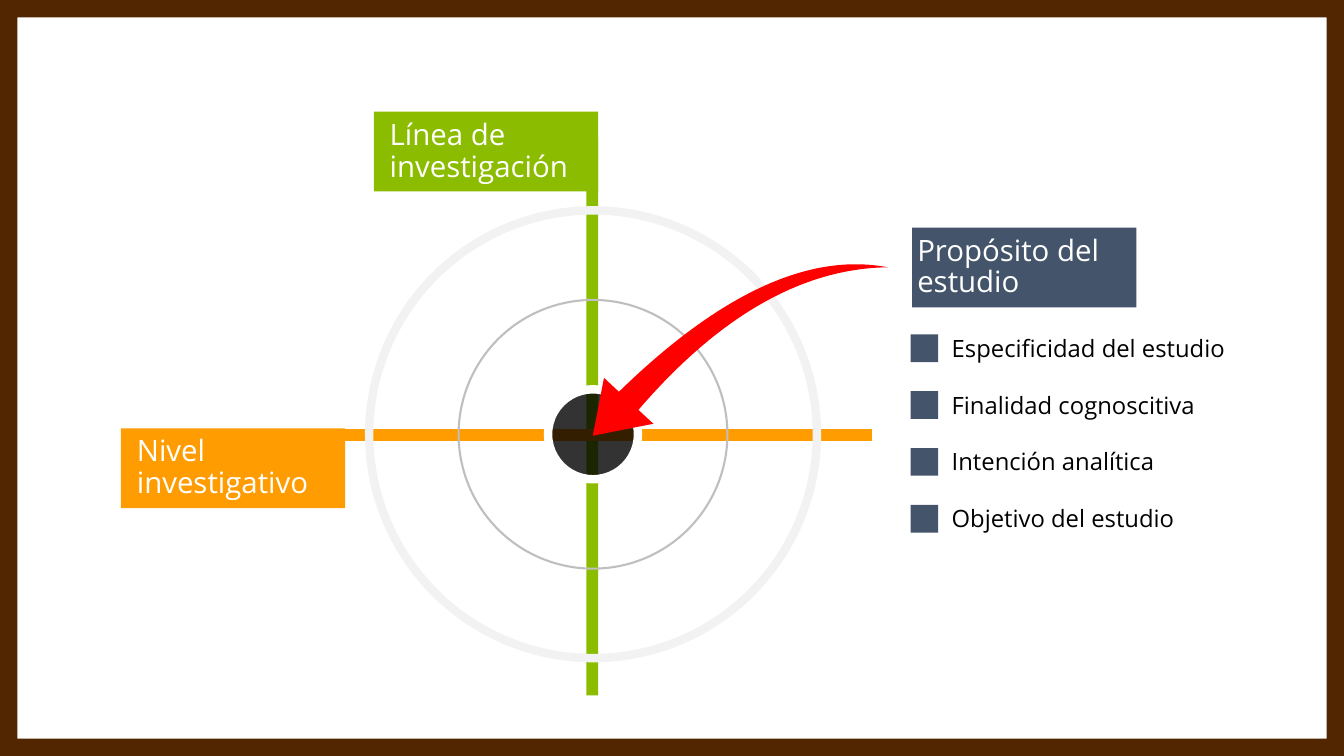
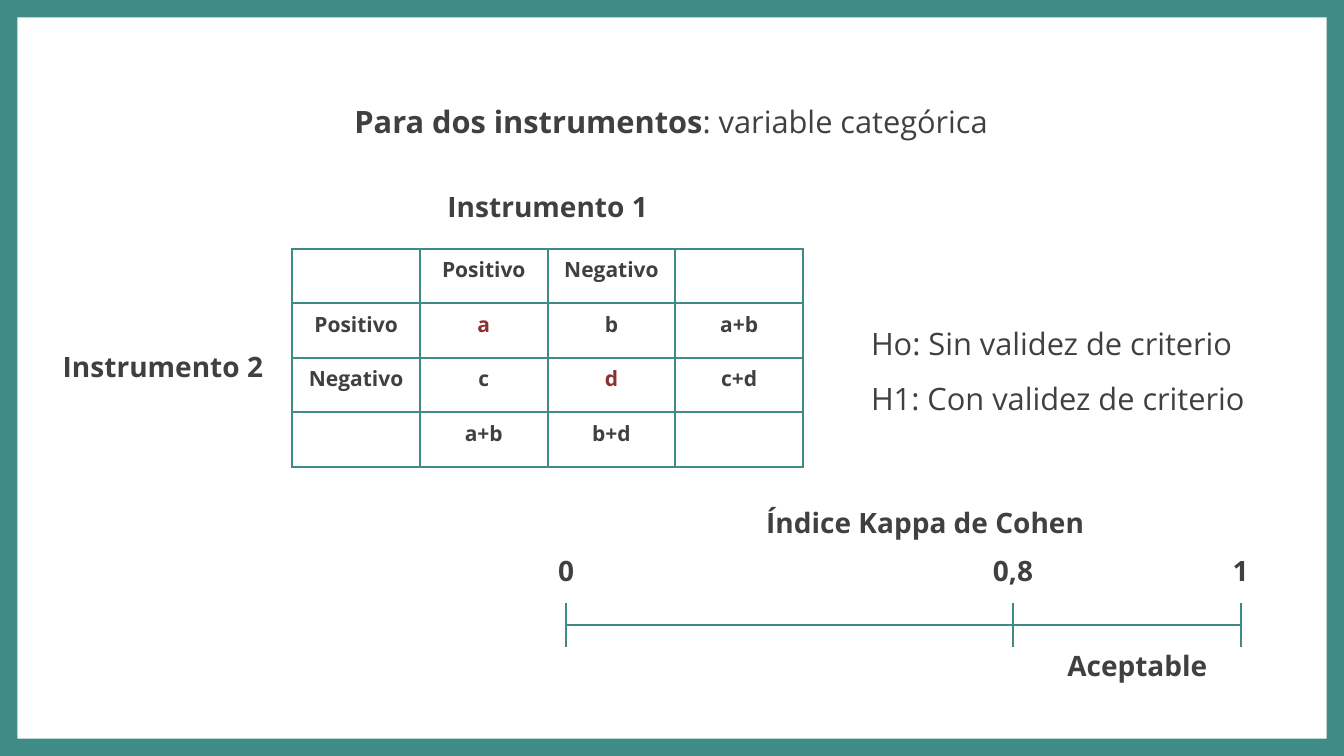
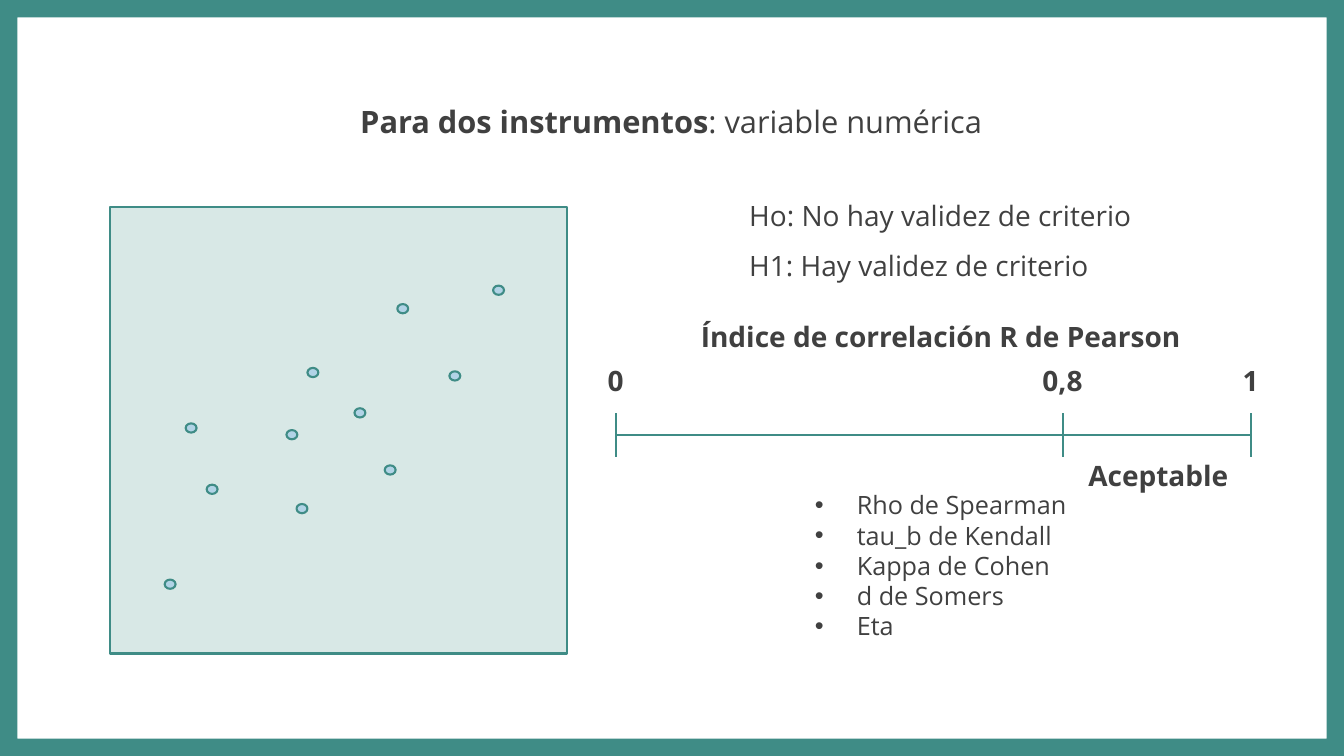
import dataclasses
import typing

import lxml.etree
import pptx
import pptx.dml.color
import pptx.enum.shapes
import pptx.enum.text
import pptx.oxml.ns
import pptx.util

COLS, ROWS = 160, 90
WIDTH, HEIGHT = pptx.util.Inches(13.33), pptx.util.Inches(7.5)
FONT = "Open Sans"
TEAL, BROWN, GREEN, ORANGE = "3F8C86", "522601", "8BBC00", "FF9C01"
SLATE, INK, WHITE, RED = "44546A", "404040", "FFFFFF", "FF0000"
WINE, BLUE, BLACK = "8B3131", "1682E6", "000000"

MSO = pptx.enum.shapes.MSO_SHAPE
ALIGN = pptx.enum.text.PP_ALIGN
ANCHOR = pptx.enum.text.MSO_ANCHOR
qn = pptx.oxml.ns.qn


class Box(typing.NamedTuple):
    x: float
    y: float
    w: float
    h: float


class Run(typing.NamedTuple):
    text: str
    bold: bool = False


@dataclasses.dataclass(frozen=True)
class Style:
    size: float = 20
    color: str = INK
    align: ALIGN = ALIGN.LEFT
    anchor: ANCHOR = ANCHOR.TOP
    spacing: float = 1.0
    wrap: bool = True
    bullet: str = ""
    insets: tuple[float, float, float, float] = (1.2, 0.6, 1.2, 0.6)


@dataclasses.dataclass(frozen=True)
class Scale:
    start: float
    cut: float
    end: float
    y: float
    verdict_x: float


TITLE = Style(size=22, align=ALIGN.CENTER, spacing=1.5)
HEADING = Style(align=ALIGN.CENTER, spacing=1.5)
TICK = Style(align=ALIGN.CENTER, wrap=False)
LABEL = Style(21, WHITE, anchor=ANCHOR.MIDDLE, spacing=0.9, insets=(1.9, 0.4, 0.4, 0.4))
PURPOSE = dataclasses.replace(LABEL, insets=(0.6, 0.4, 0.6, 0.4))
ITEM = Style(17, BLACK, anchor=ANCHOR.MIDDLE, spacing=0.9, insets=(1.8, 1.8, 1.8, 1.8))
HYPOTHESES = Style(size=22, spacing=1.5, wrap=False)
BULLETS = Style(size=18, wrap=False, bullet="•")
CELL = Style(size=15, align=ALIGN.CENTER)


def rgb(value: str) -> pptx.dml.color.RGBColor:
    return pptx.dml.color.RGBColor.from_string(value)


def col(n: float) -> int:
    return round(WIDTH * n / COLS)


def row(n: float) -> int:
    return round(HEIGHT * n / ROWS)


def emu(box: Box) -> tuple[int, int, int, int]:
    return col(box.x), row(box.y), col(box.w), row(box.h)


def add_runs(p, runs: typing.Iterable[Run], style: Style) -> None:
    p.alignment = style.align
    p.line_spacing = style.spacing
    p.space_before = p.space_after = pptx.util.Pt(0)
    pPr = p._p.get_or_add_pPr()
    indent = col(5) if style.bullet else 0
    pPr.set("marL", str(indent))
    pPr.set("indent", str(-indent))
    if style.bullet:
        lxml.etree.SubElement(pPr, qn("a:buChar")).set("char", style.bullet)
    else:
        lxml.etree.SubElement(pPr, qn("a:buNone"))
    for run in runs:
        r = p.add_run()
        r.text = run.text
        r.font.name = FONT
        r.font.size = pptx.util.Pt(style.size)
        r.font.bold = run.bold
        r.font.color.rgb = rgb(style.color)


def write(sp, style: Style, *paragraphs: typing.Iterable[Run]) -> None:
    tf = sp.text_frame
    tf.auto_size = pptx.enum.text.MSO_AUTO_SIZE.NONE
    tf.word_wrap = style.wrap
    tf.vertical_anchor = style.anchor
    left, top, right, bottom = style.insets
    tf.margin_left, tf.margin_right = col(left), col(right)
    tf.margin_top, tf.margin_bottom = row(top), row(bottom)
    for i, runs in enumerate(paragraphs):
        add_runs(tf.add_paragraph() if i else tf.paragraphs[0], runs, style)


def add_text(s, box: Box, style: Style, *paragraphs: typing.Iterable[Run]) -> None:
    write(s.shapes.add_textbox(*emu(box)), style, *paragraphs)


def place(sp, box: Box):
    sp.left, sp.top, sp.width, sp.height = emu(box)
    return sp


def add_shape(s, kind: MSO, box: Box, fill: str = "", line: str = "",
              weight: float = 1.5, alpha: int = 100):
    sp = s.shapes.add_shape(kind, *emu(box))
    sp.shadow.inherit = False
    if fill:
        sp.fill.solid()
        sp.fill.fore_color.rgb = rgb(fill)
        if alpha < 100:
            clr = sp._element.spPr.find(qn("a:solidFill")).find(qn("a:srgbClr"))
            lxml.etree.SubElement(clr, qn("a:alpha")).set("val", str(alpha * 1000))
    else:
        sp.fill.background()
    if line:
        sp.line.color.rgb = rgb(line)
        sp.line.width = pptx.util.Pt(weight)
    else:
        sp.line.fill.background()
    return sp


def add_line(s, x1: float, y1: float, x2: float, y2: float) -> None:
    cn = s.shapes.add_connector(
        pptx.enum.shapes.MSO_CONNECTOR.STRAIGHT, col(x1), row(y1), col(x2), row(y2))
    cn.line.color.rgb = rgb(TEAL)
    cn.line.width = pptx.util.Pt(1.5)
    lxml.etree.SubElement(cn._element.spPr, qn("a:effectLst"))


def add_frame(s, color: str) -> None:
    add_shape(s, MSO.FRAME, Box(0, 0, COLS, ROWS), color).adjustments[0] = 0.023


def add_instrument_slide(prs, variable: str):
    s = prs.slides.add_slide(prs.slide_layouts[1])
    write(place(s.shapes.title, Box(37.2, 9.4, 85.4, 7.2)), TITLE,
          [Run("Para dos instrumentos", True), Run(f": variable {variable}")])
    add_frame(s, TEAL)
    return s


def add_scale(s, scale: Scale) -> None:
    add_line(s, scale.start, scale.y, scale.end, scale.y)
    for x, text in ((scale.start, "0"), (scale.cut, "0,8"), (scale.end, "1")):
        add_line(s, x, scale.y - 2.6, x, scale.y + 2.6)
        add_text(s, Box(x - 3.6, scale.y - 9.1, 7.2, 5.3), TICK, [Run(text, True)])
    add_text(s, Box(scale.verdict_x, scale.y + 2.2, 19.2, 5.3), TICK,
             [Run("Aceptable", True)])


def add_borders(cell) -> None:
    tcPr = cell._tc.get_or_add_tcPr()
    for side in ("L", "R", "T", "B"):
        ln = lxml.etree.SubElement(tcPr, qn(f"a:ln{side}"))
        ln.set("w", str(pptx.util.Pt(1.5)))
        fill = lxml.etree.SubElement(ln, qn("a:solidFill"))
        lxml.etree.SubElement(fill, qn("a:srgbClr")).set("val", TEAL)


def add_agreement_table(s) -> None:
    rows = (("", "Positivo", "Negativo", ""),
            ("Positivo", "a", "b", "a+b"),
            ("Negativo", "c", "d", "c+d"),
            ("", "a+b", "b+d", ""))
    table = s.shapes.add_table(4, 4, *emu(Box(34.8, 29.6, 4 * 15.2, 4 * 6.5))).table
    table.first_row = table.horz_banding = False
    for i, texts in enumerate(rows):
        table.rows[i].height = row(6.5)
        table.columns[i].width = col(15.2)
        for j, text in enumerate(texts):
            cell = table.cell(i, j)
            add_borders(cell)
            cell.fill.background()
            cell.margin_left = cell.margin_right = col(1.6)
            cell.margin_top = cell.margin_bottom = row(0.8)
            if text:
                color = WINE if text in ("a", "d") else INK
                add_runs(cell.text_frame.paragraphs[0], [Run(text, True)],
                         dataclasses.replace(CELL, color=color))


def target_slide(prs) -> None:
    s = prs.slides.add_slide(prs.slide_layouts[5])
    add_shape(s, MSO.RECTANGLE, Box(69.8, 16.7, 1.4, 66.1), GREEN)
    add_shape(s, MSO.RECTANGLE, Box(37.7, 51.1, 66.1, 1.4), ORANGE)
    for size, fill, line, weight in ((53.3, "", "F2F2F2", 6), (32, "", "BFBFBF", 1.5),
                                     (10.7, BLACK, WHITE, 6)):
        box = Box(70.6 - size / 2, 51.7 - size / 2, size, size)
        add_shape(s, MSO.OVAL, box, fill, line, weight, 80)
    for x, y, color, text in ((44.5, 13.3, GREEN, "Línea de investigación"),
                              (14.4, 51, ORANGE, "Nivel investigativo")):
        sp = add_shape(s, MSO.RECTANGLE, Box(x, y, 26.7, 9.5), color)
        write(sp, LABEL, [Run(text)])
    title = place(s.shapes.title, Box(108.6, 27.1, 26.7, 9.5))
    title.fill.solid()
    title.fill.fore_color.rgb = rgb(SLATE)
    write(title, PURPOSE, [Run("Propósito del estudio")])
    arrow = add_shape(s, MSO.SWOOSH_ARROW, Box(68.4, 31.3, 37, 19.3), RED)
    arrow.adjustments[0], arrow.adjustments[1] = 0.163, 0.314
    arrow.rotation = 126.5
    arrow._element.spPr.find(qn("a:xfrm")).set("flipV", "1")
    for i, text in enumerate(("Especificidad del estudio", "Finalidad cognoscitiva",
                              "Intención analítica", "Objetivo del estudio")):
        y = 39.8 + i * 6.77
        add_shape(s, MSO.RECTANGLE, Box(108.4, y, 3.3, 3.3), SLATE)
        add_text(s, Box(111.5, y - 2, 36.5, 7.6), ITEM, [Run(text)])
    add_frame(s, BROWN)


def categorical_slide(prs) -> None:
    s = add_instrument_slide(prs, "categórica")
    for box, text in ((Box(44.4, 20, 41.6, 6.6), "Instrumento 1"),
                      (Box(2.4, 39, 34, 6.6), "Instrumento 2"),
                      (Box(85.6, 57.6, 49.1, 6.6), "Índice Kappa de Cohen")):
        add_text(s, box, HEADING, [Run(text, True)])
    add_agreement_table(s)
    add_scale(s, Scale(67.4, 120.6, 147.7, 74.4, 125.8))
    write(place(s.placeholders[1], Box(102.5, 35.8, 47.5, 13.8)), HYPOTHESES,
          [Run("Ho: Sin validez de criterio")], [Run("H1: Con validez de criterio")])


def numeric_slide(prs) -> None:
    s = add_instrument_slide(prs, "numérica")
    add_text(s, Box(77.3, 35.4, 69.4, 6.6), HEADING,
             [Run("Índice de correlación R de Pearson", True)])
    add_shape(s, MSO.RECTANGLE, Box(13.1, 24.6, 54.4, 53.2), TEAL, TEAL, alpha=20)
    for x, y in ((19.6, 69), (24.6, 57.7), (35.3, 60), (36.6, 43.8), (42.2, 48.6),
                 (53.5, 44.2), (34.1, 51.2), (47.3, 36.2), (58.7, 34), (45.8, 55.4),
                 (22.1, 50.4)):
        add_shape(s, MSO.OVAL, Box(x, y, 1.3, 1.1), BLUE, TEAL, alpha=20)
    add_scale(s, Scale(73.3, 126.5, 148.9, 51.8, 128.3))
    add_text(s, Box(88, 21, 48.4, 12.7), dataclasses.replace(HYPOTHESES, size=20),
             [Run("Ho: No hay validez de criterio")], [Run("H1: Hay validez de criterio")])
    indices = ("Rho de Spearman", "tau_b de Kendall", "Kappa de Cohen", "d de Somers", "Eta")
    write(place(s.placeholders[1], Box(95.8, 57.7, 32.6, 19.4)), BULLETS,
          *([Run(text)] for text in indices))


def main() -> None:
    prs = pptx.Presentation()
    prs.slide_width, prs.slide_height = WIDTH, HEIGHT
    target_slide(prs)
    categorical_slide(prs)
    numeric_slide(prs)
    prs.save("out.pptx")


if __name__ == "__main__":
    main()
